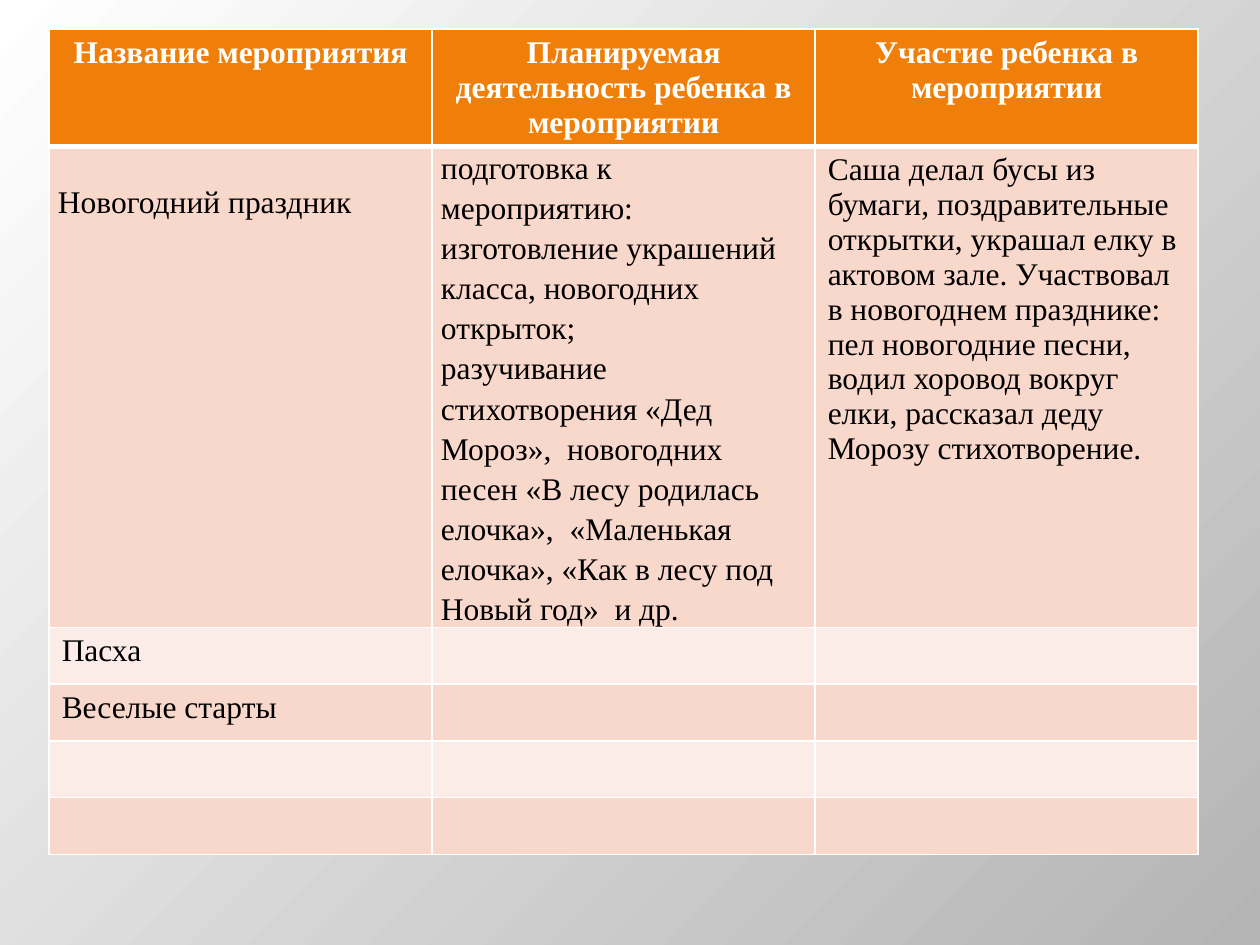
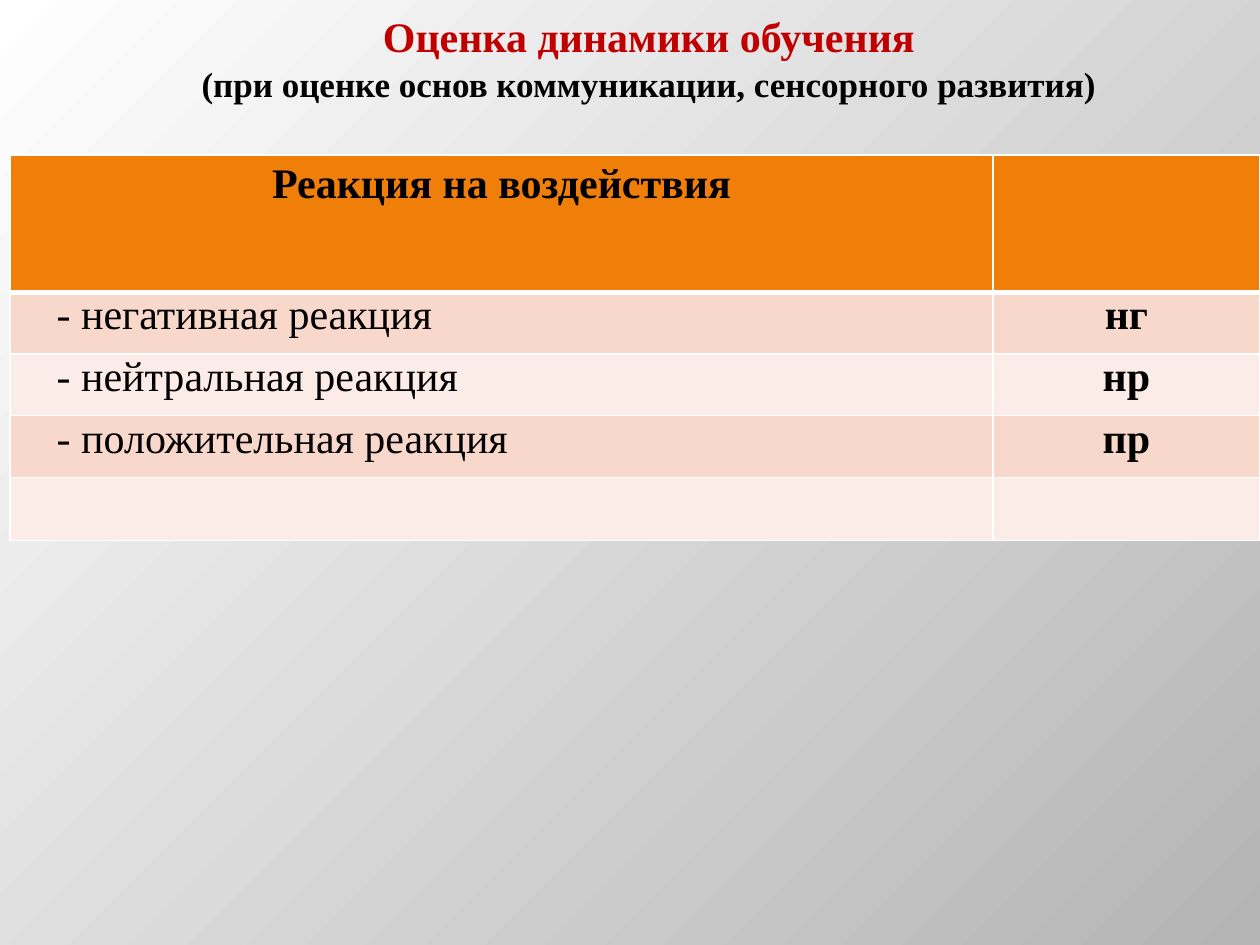
import dataclasses
import pptx
import pptx.util
import pptx.dml.color
import pptx.enum.text
import pptx.oxml.ns
from lxml import etree

Inches = pptx.util.Inches
Pt = pptx.util.Pt
RGB = pptx.dml.color.RGBColor.from_string
LEFT = pptx.enum.text.PP_ALIGN.LEFT
CENTER = pptx.enum.text.PP_ALIGN.CENTER
qn = pptx.oxml.ns.qn


@dataclasses.dataclass(frozen=True)
class Theme:
    font: str = "Times New Roman"
    white: str = "FFFFFF"
    gray: str = "B4B4B4"
    orange: str = "F07F09"
    bands: tuple = ("F9D8CC", "FCECE7")
    red: str = "C00000"
    black: str = "000000"
    body: int = 18
    subtitle: int = 20
    large: int = 24
    thin: int = 1
    thick: int = 3


THEME = Theme()


@dataclasses.dataclass
class CellText:
    """Wording of a body cell together with its layout."""
    lines: tuple = ()
    bold: bool = False
    align: int = LEFT
    indent: float = 0
    spacing: float = 1.0
    side: float = 0.1
    top: float = 0.05
    bottom: float = 0.05


def tight(*lines, **layout):
    """Cell text with narrow sides and no space above or below."""
    return CellText(lines, **{"side": 0.07, "top": 0, "bottom": 0, **layout})


# Background
def add_slide(deck):
    slide = deck.slides.add_slide(deck.slide_layouts[6])
    fill = slide.background.fill
    fill.gradient()
    for stop, color in zip(fill.gradient_stops, (THEME.white, THEME.gray)):
        stop.color.rgb = RGB(color)
    # Spread the gradient from the top left corner
    gradient = next(slide.element.iter(qn("a:gradFill")))
    gradient.remove(gradient.find(qn("a:lin")))
    spread = etree.SubElement(gradient, qn("a:path"), path="circle")
    etree.SubElement(spread, qn("a:fillToRect"), r="100000", b="100000")
    return slide


# Text
def style_paragraph(paragraph, size, color, bold, align):
    paragraph.alignment = align
    paragraph.font.name = THEME.font
    paragraph.font.size = Pt(size)
    paragraph.font.bold = bold
    paragraph.font.color.rgb = RGB(color)


def add_heading(slide, title, subtitle):
    frame = slide.shapes.add_textbox(
        Inches(0.47), Inches(0), Inches(9.36), Inches(1.17)).text_frame
    frame.word_wrap = True
    frame.margin_top = Inches(0.08)
    frame.text = f"{title}\n{subtitle}"
    looks = ((THEME.large, THEME.red), (THEME.subtitle, THEME.black))
    for paragraph, (size, color) in zip(frame.paragraphs, looks):
        style_paragraph(paragraph, size, color, True, CENTER)
    frame.paragraphs[1].space_before = Pt(1)


# Tables
def add_borders(cell, row):
    properties = cell._tc.get_or_add_tcPr()
    widths = {
        "a:lnL": THEME.thin,
        "a:lnR": THEME.thin,
        "a:lnT": THEME.thick if row == 1 else THEME.thin,
        "a:lnB": THEME.thick if row == 0 else THEME.thin,
    }
    for side, width in widths.items():
        line = etree.SubElement(properties, qn(side), w=str(Pt(width)))
        solid = etree.SubElement(line, qn("a:solidFill"))
        etree.SubElement(solid, qn("a:srgbClr"), val=THEME.white)


def fill_cell(cell, row, content, size, color):
    add_borders(cell, row)
    cell.fill.solid()
    cell.fill.fore_color.rgb = RGB(
        THEME.bands[(row - 1) % 2] if row else THEME.orange)
    cell.margin_left = cell.margin_right = Inches(content.side)
    cell.margin_top = Inches(content.top)
    cell.margin_bottom = Inches(content.bottom)
    cell.text = "\n".join(content.lines)
    for paragraph in cell.text_frame.paragraphs:
        style_paragraph(paragraph, size, color, content.bold, content.align)
        paragraph.line_spacing = content.spacing
        if content.indent:
            paragraph._p.get_or_add_pPr().set(
                "marL", str(Inches(content.indent)))


def add_banded_table(slide, left, top, widths, heights, header, body,
                     size, header_color):
    table = slide.shapes.add_table(
        len(heights), len(widths), Inches(left), Inches(top),
        Inches(sum(widths)), Inches(sum(heights))).table
    for column, width in zip(table.columns, widths):
        column.width = Inches(width)
    for row, height in zip(table.rows, heights):
        row.height = Inches(height)
    titles = [CellText((title,), bold=True, align=CENTER) for title in header]
    rows = [titles] + body
    for r in range(len(heights)):
        contents = rows[r] if r < len(rows) else []
        for c in range(len(widths)):
            content = contents[c] if c < len(contents) else CellText()
            fill_cell(table.cell(r, c), r, content, size,
                      THEME.black if r else header_color)


# Slides
def add_events_slide(deck):
    slide = add_slide(deck)
    new_year = [
        tight("Новогодний праздник", spacing=1.15, top=0.27),
        tight("подготовка к мероприятию: изготовление украшений класса, "
              "новогодних открыток;",
              "разучивание стихотворения «Дед Мороз»,  новогодних песен "
              "«В лесу родилась елочка»,  «Маленькая елочка», "
              "«Как в лесу под Новый год»  и др.", spacing=1.15),
        CellText(("Саша делал бусы из бумаги, поздравительные открытки, "
                  "украшал елку в актовом зале. Участвовал в новогоднем "
                  "празднике: пел новогодние песни, водил хоровод вокруг "
                  "елки, рассказал деду Морозу стихотворение.",)),
    ]
    other_events = [[CellText((event,))]
                    for event in ("Пасха", "Веселые старты")]
    add_banded_table(
        slide, 0.39, 0.23, [3.04] * 3, [0.93, 3.82] + [0.45] * 4,
        ("Название мероприятия",
         "Планируемая деятельность ребенка в мероприятии",
         "Участие ребенка в мероприятии"),
        [new_year] + other_events, THEME.body, THEME.white)


def add_reactions_slide(deck):
    slide = add_slide(deck)
    add_heading(slide, "Оценка динамики обучения",
                "(при оценке основ коммуникации, сенсорного развития)")
    reactions = {"негативная": "нг", "нейтральная": "нр",
                 "положительная": "пр"}
    body = [[tight(f"- {reaction} реакция", indent=0.3),
             tight(mark, bold=True, align=CENTER)]
            for reaction, mark in reactions.items()]
    add_banded_table(
        slide, 0.08, 1.23, [7.8, 2.12], [1.09] + [0.49] * 4,
        ("Реакция на воздействия", ""), body, THEME.large, THEME.black)


def main():
    deck = pptx.Presentation()
    deck.slide_width = Inches(10)
    deck.slide_height = Inches(7.5)
    add_events_slide(deck)
    add_reactions_slide(deck)
    deck.save("out.pptx")


if __name__ == "__main__":
    main()
